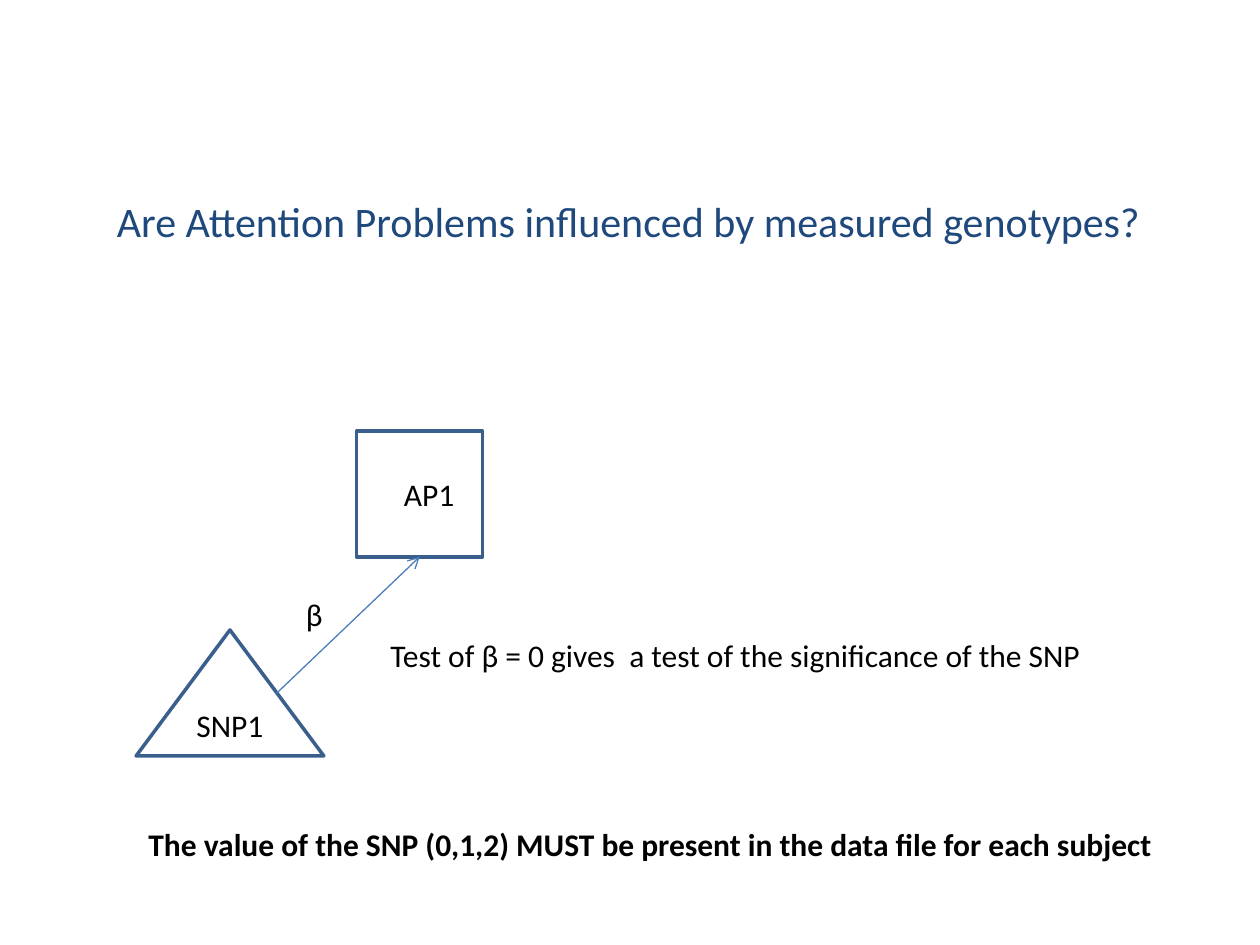
from dataclasses import dataclass

from lxml import etree
from pptx import Presentation
from pptx.dml.color import RGBColor
from pptx.enum.shapes import MSO_CONNECTOR, MSO_SHAPE
from pptx.enum.text import MSO_ANCHOR, MSO_AUTO_SIZE, PP_ALIGN
from pptx.oxml.ns import qn
from pptx.util import Inches, Pt

TRIANGLE, RECT = MSO_SHAPE.ISOSCELES_TRIANGLE, MSO_SHAPE.RECTANGLE
STRAIGHT = MSO_CONNECTOR.STRAIGHT
MIDDLE = MSO_ANCHOR.MIDDLE
LEFT, CENTER = PP_ALIGN.LEFT, PP_ALIGN.CENTER
GROW = MSO_AUTO_SIZE.SHAPE_TO_FIT_TEXT

FONT = "Calibri"
COLORS = {"white": "FFFFFF", "black": "000000", "title": "1F497D",
          "outline": "3A5F8C", "path": "4B7EBC"}


@dataclass
class Node:
    kind: int
    text: str
    left: float
    top: float
    width: float
    height: float
    inset: float = 0.1


@dataclass
class Label:
    text: str
    left: float
    top: float
    width: float
    height: float = 0.4
    size: int = 18
    color: str = "black"
    bold: bool = False
    wrap: bool = False


NODES = [
    Node(TRIANGLE, "SNP1", 1.08, 5, 1.49, 1),
    Node(RECT, "AP1", 2.83, 3.42, 1, 1, inset=0.25),
]
LABELS = [
    Label("β", 2.33, 4.67, 0.34),
    Label("Test of β = 0 gives  a test of the significance of the SNP", 3, 5, 5.75),
    Label("Are Attention Problems influenced by measured genotypes?",
          0.83, 1.5, 8.56, height=0.5, size=24, color="title"),
    Label("The value of the SNP (0,1,2) MUST be present in the data file "
          "for each subject", 1.08, 6.5, 8.33, bold=True, wrap=True),
]


def rgb(name: str) -> RGBColor:
    return RGBColor.from_string(COLORS[name])


def write(tf, text: str, size: int = 18, color: str = "black",
          bold: bool = False, align=LEFT) -> None:
    p = tf.paragraphs[0]
    p.alignment = align
    r = p.add_run()
    r.text = text
    r.font.name, r.font.size, r.font.bold = FONT, Pt(size), bold
    r.font.color.rgb = rgb(color)


def draw_node(s, n: Node) -> None:
    sp = s.shapes.add_shape(n.kind, Inches(n.left), Inches(n.top),
                            Inches(n.width), Inches(n.height))
    sp.shadow.inherit = False
    sp.fill.solid()
    sp.fill.fore_color.rgb = rgb("white")
    sp.line.color.rgb = rgb("outline")
    sp.line.width = Pt(2)
    tf = sp.text_frame
    tf.vertical_anchor = MIDDLE
    tf.margin_left = Inches(n.inset)
    write(tf, n.text, align=CENTER)


def draw_arrow(s, x1: float, y1: float, x2: float, y2: float) -> None:
    c = s.shapes.add_connector(STRAIGHT, Inches(x1), Inches(y1),
                               Inches(x2), Inches(y2))
    c.line.color.rgb = rgb("path")
    c.line.width = Pt(0.75)
    etree.SubElement(c.line._get_or_add_ln(), qn("a:tailEnd"), type="arrow")
    etree.SubElement(c._element.spPr, qn("a:effectLst"))


def draw_label(s, b: Label) -> None:
    tf = s.shapes.add_textbox(Inches(b.left), Inches(b.top),
                              Inches(b.width), Inches(b.height)).text_frame
    tf.word_wrap = b.wrap
    tf.auto_size = GROW
    write(tf, b.text, size=b.size, color=b.color, bold=b.bold)


def main() -> None:
    prs = Presentation()
    prs.slide_width, prs.slide_height = Inches(10), Inches(7.5)
    s = prs.slides.add_slide(prs.slide_layouts[6])

    # Path diagram: genotype node, phenotype node and the effect between them
    for node in NODES:
        draw_node(s, node)
    snp, ap = NODES
    draw_arrow(s, snp.left + snp.width * 0.75, snp.top + snp.height / 2,
               ap.left + ap.width / 2, ap.top + ap.height)

    # Title, path coefficient and remarks
    for label in LABELS:
        draw_label(s, label)

    prs.save("out.pptx")


if __name__ == "__main__":
    main()
